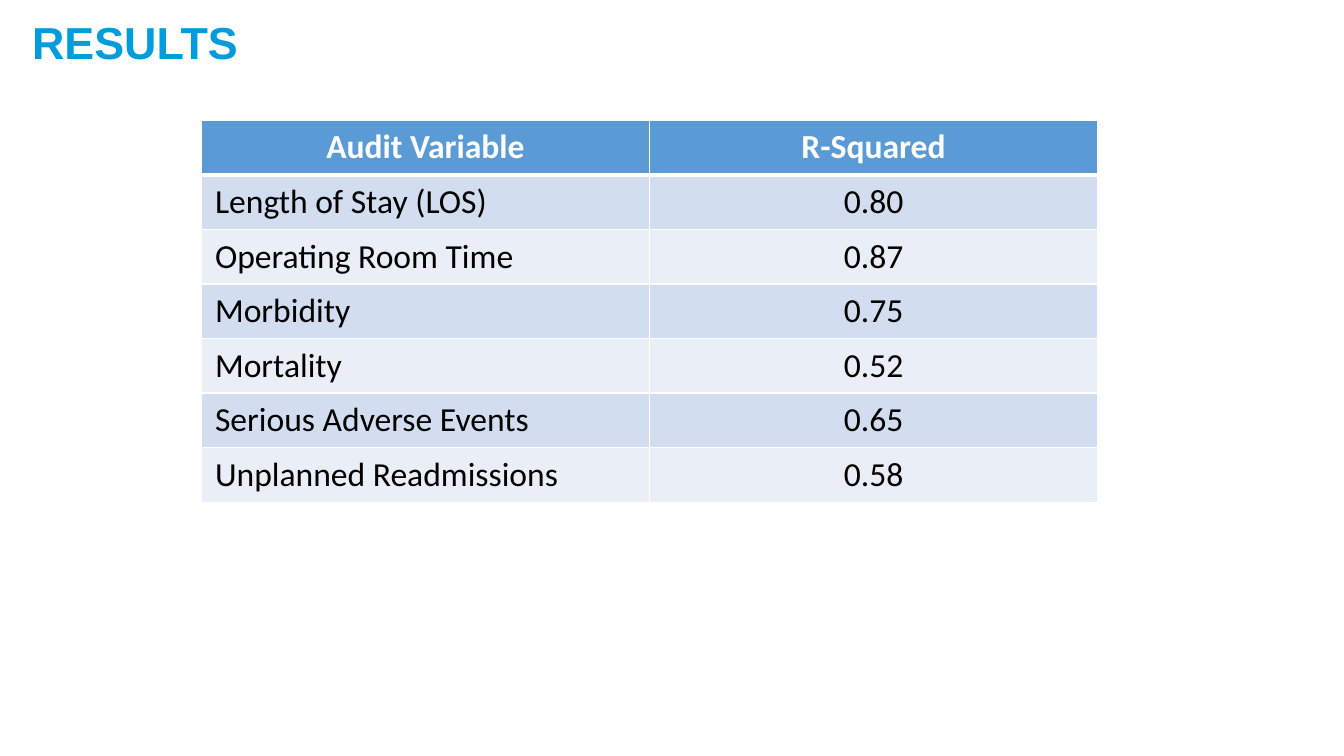
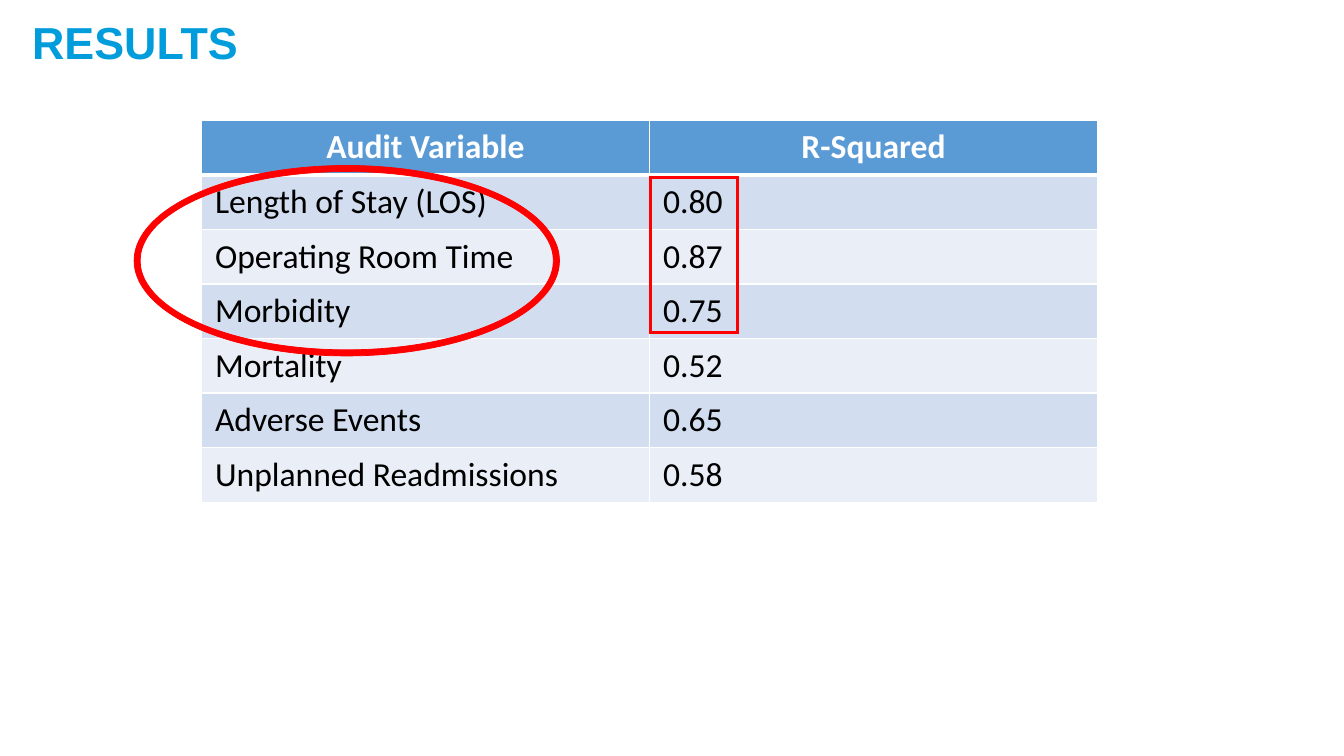
import pptx
import pptx.dml.color
import pptx.enum.shapes
import pptx.enum.text
import pptx.oxml
import pptx.oxml.ns
import pptx.util

Cm = pptx.util.Cm
Pt = pptx.util.Pt
SHAPE = pptx.enum.shapes.MSO_SHAPE
ALIGN = pptx.enum.text.PP_ALIGN

COLORS = {
    "title": "009CDC",
    "header": "5B9BD5",
    "band_dark": "D2DEEF",
    "band_light": "EAEFF7",
    "white": "FFFFFF",
    "black": "000000",
    "mark": "FF0000",
}


def rgb(name):
    return pptx.dml.color.RGBColor.from_string(COLORS[name])


def write(tf, text, size=24, font="Calibri", color="black", bold=False, align=ALIGN.LEFT):
    p = tf.paragraphs[0]
    p.alignment = align
    r = p.add_run()
    r.text = text
    r.font.size = Pt(size)
    r.font.name = font
    r.font.bold = bold
    r.font.color.rgb = rgb(color)


# Content: the two slides differ in one label, the value alignment and the marks
header = ("Audit Variable", "R-Squared")
values = ("0.80", "0.87", "0.75", "0.52", "0.65", "0.58")
slides = [
    {"events": "Serious Adverse Events", "align": ALIGN.CENTER, "marks": []},
    {"events": "Adverse Events", "align": ALIGN.LEFT, "marks": [
        (SHAPE.FRAME, 16.36, 4.45, 2.26, 3.96, 0.023),
        (SHAPE.DONUT, 3.38, 4.17, 10.72, 4.8, 0.032),
    ]},
]

prs = pptx.Presentation()
prs.slide_width = Cm(33.87)
prs.slide_height = Cm(19.05)

for content in slides:
    s = prs.slides.add_slide(prs.slide_layouts[6])

    # Title
    sp = s.shapes.add_textbox(Cm(0.56), Cm(0.2), Cm(33.3), Cm(1.7))
    tf = sp.text_frame
    tf.word_wrap = True
    tf.vertical_anchor = pptx.enum.text.MSO_ANCHOR.MIDDLE
    write(tf, "RESULTS", size=32, font="Arial", color="title", bold=True)

    # Table
    labels = ("Length of Stay (LOS)", "Operating Room Time", "Morbidity",
              "Mortality", content["events"], "Unplanned Readmissions")
    rows = [header, *zip(labels, values)]
    table = s.shapes.add_table(len(rows), 2, Cm(5.08), Cm(3.03), Cm(22.58), Cm(9.63)).table
    for i, row in enumerate(rows):
        for j, text in enumerate(row):
            cell = table.cell(i, j)
            cell.margin_left = cell.margin_right = Cm(0.34)
            cell.margin_top = cell.margin_bottom = Cm(0.17)

            # White borders, thicker below the header
            tc_pr = cell._tc.get_or_add_tcPr()
            for side in "LRTB":
                thick = (i, side) in ((0, "B"), (1, "T"))
                tc_pr.append(pptx.oxml.parse_xml(
                    f'<a:ln{side} {pptx.oxml.ns.nsdecls("a")} w="{Pt(3 if thick else 1)}">'
                    f'<a:solidFill><a:srgbClr val="{COLORS["white"]}"/></a:solidFill>'
                    f'</a:ln{side}>'))

            cell.fill.solid()
            if i == 0:
                cell.fill.fore_color.rgb = rgb("header")
                write(cell.text_frame, text, color="white", bold=True, align=ALIGN.CENTER)
            else:
                cell.fill.fore_color.rgb = rgb("band_dark" if i % 2 else "band_light")
                write(cell.text_frame, text, align=content["align"] if j else ALIGN.LEFT)

    # Red marks around the strongest results
    for kind, left, top, width, height, thickness in content["marks"]:
        sp = s.shapes.add_shape(kind, Cm(left), Cm(top), Cm(width), Cm(height))
        sp.adjustments[0] = thickness
        sp.shadow.inherit = False
        sp.fill.solid()
        sp.fill.fore_color.rgb = rgb("mark")
        sp.line.color.rgb = rgb("mark")
        sp.line.width = Pt(0.5)

prs.save("out.pptx")
